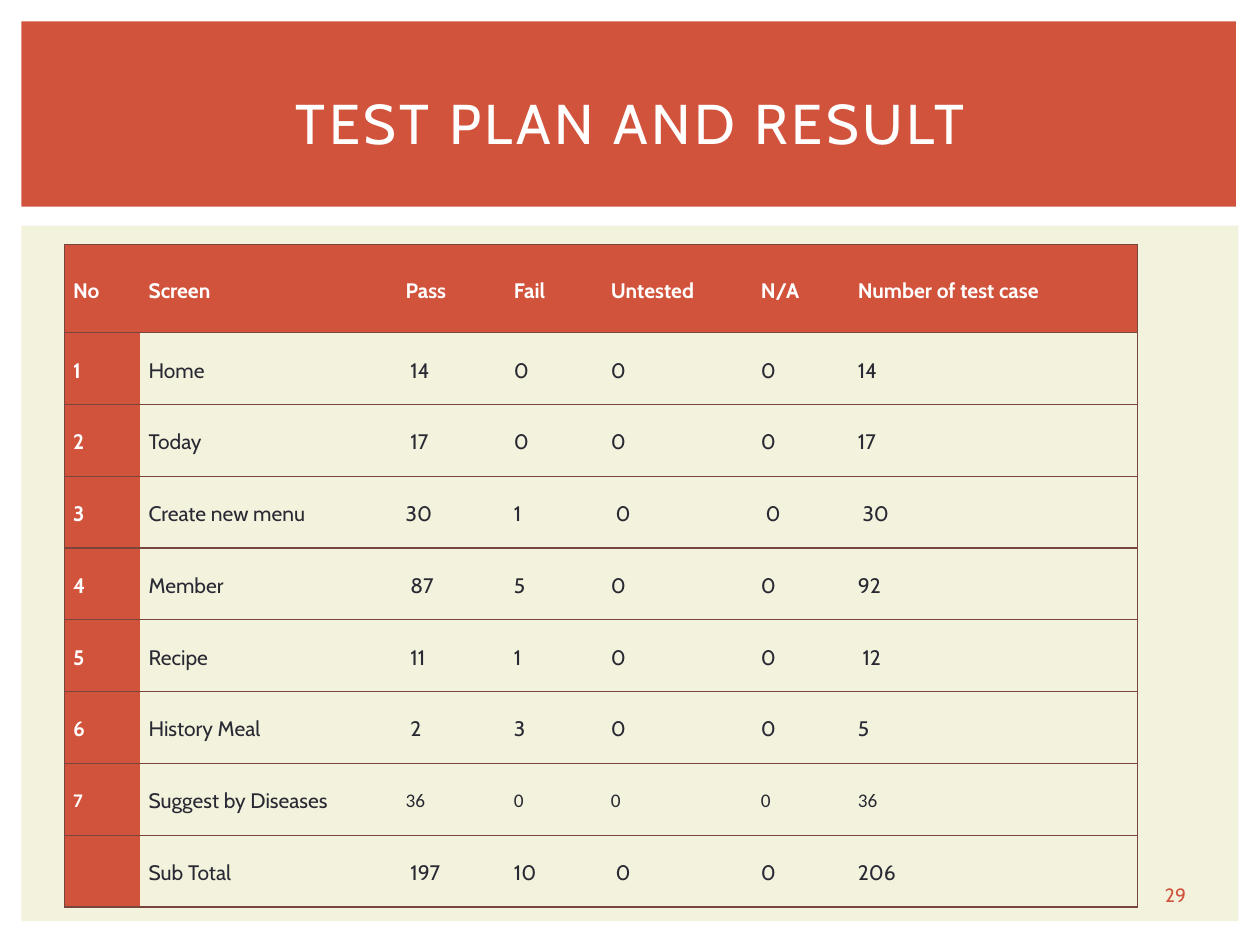
from lxml import etree
from pptx import Presentation
from pptx.dml.color import RGBColor
from pptx.enum.shapes import MSO_SHAPE
from pptx.enum.text import MSO_ANCHOR, PP_ALIGN
from pptx.oxml.ns import qn
from pptx.util import Pt

PX = 9144
RECT = MSO_SHAPE.RECTANGLE
MIDDLE = MSO_ANCHOR.MIDDLE
CENTER = PP_ALIGN.CENTER
RED, CREAM, WHITE, DARK, BROWN = "D2533C", "F3F2DC", "FFFFFF", "292934", "79463D"
NO_STYLE = "{2D5ABB26-0587-4C30-8999-92F81FD0307C}"


def rgb(value):
    return RGBColor.from_string(value)


def write(tf, text, color, **fmt):
    p = tf.paragraphs[0]
    r = p.add_run()
    r.text = text
    r.font.color.rgb = rgb(color)
    for key, value in fmt.items():
        setattr(r.font, key, value)
    return p


prs = Presentation()
prs.slide_width, prs.slide_height = 1000 * PX, 750 * PX
slide = prs.slides.add_slide(prs.slide_layouts[5])
shapes = slide.shapes
title = shapes.title

for box, color in [((17, 179, 966, 552), CREAM), ((17, 17, 964, 147), RED)]:
    sp = shapes.add_shape(RECT, *[v * PX for v in box])
    sp.shadow.inherit = False
    sp.fill.solid()
    sp.fill.fore_color.rgb = rgb(color)
    sp.line.fill.background()
    title._element.addprevious(sp._element)

for key, value in {"left": 42, "top": 39, "width": 917, "height": 115}.items():
    setattr(title, key, value * PX)
title.text_frame.vertical_anchor = MIDDLE
p = write(title.text_frame, "TEST PLAN AND RESULT", WHITE, size=Pt(32), name="Cabin")
p.alignment = CENTER
p.runs[0].font._element.set("spc", "200")

rows = [
    ["No", "Screen", "Pass", "Fail", "Untested", "N/A", "Number of test case"],
    ["1", "Home", " 14", "0", "0", "0", "14"],
    ["2", "Today", " 17", "0", "0", "0", "17"],
    ["3", "Create new menu", "30", "1", " 0", " 0", " 30"],
    ["4", "Member", " 87", "5", "0", "0", "92"],
    ["5", "Recipe", " 11", "1", "0", "0", " 12"],
    ["6", "History Meal", " 2", "3", "0", "0", "5"],
    ["7", "Suggest by Diseases", "36", "0", "0", "0", "36"],
    ["", "Sub Total", " 197", "10", " 0", "0", "206"],
]
widths = [60, 204, 86, 77, 119, 77, 229]
heights = [70] + [57] * 8
last = len(widths) - 1

frame = shapes.add_table(len(rows), len(widths), 51 * PX, 194 * PX,
                         sum(widths) * PX, sum(heights) * PX)
table = frame.table
table.horz_banding = False
table._tbl.tblPr.find(qn("a:tableStyleId")).text = NO_STYLE
for col, w in zip(table.columns, widths):
    col.width = w * PX
for row, h in zip(table.rows, heights):
    row.height = h * PX

cell_fmt = {"vertical_anchor": MIDDLE, "margin_left": 7 * PX, "margin_right": 7 * PX,
            "margin_top": 0, "margin_bottom": 0}
para_fmt = {"line_spacing": 1.15, "space_before": Pt(6)}

for i, row in enumerate(rows):
    for j, text in enumerate(row):
        cell = table.cell(i, j)
        for key, value in cell_fmt.items():
            setattr(cell, key, value)
        tcPr = cell._tc.get_or_add_tcPr()
        sides = ["L"] * (j == 0) + ["R"] * (j == last) + ["T", "B"]
        for side in sides:
            ln = etree.SubElement(tcPr, qn("a:ln" + side), w="10000")
            fill = etree.SubElement(ln, qn("a:solidFill"))
            etree.SubElement(fill, qn("a:srgbClr"), val=BROWN)
        head = i == 0 or j == 0
        if head:
            cell.fill.solid()
            cell.fill.fore_color.rgb = rgb(RED)
        else:
            cell.fill.background()
        if not text:
            continue
        small = i == 7 and j != 1
        p = write(cell.text_frame, text, WHITE if head else DARK, bold=head,
                  size=Pt(11 if small else 12), name="Calibri" if small else "Cabin")
        for key, value in para_fmt.items():
            setattr(p, key, value)

tf = shapes.add_textbox(901 * PX, 695 * PX, 64 * PX, 30 * PX).text_frame
tf.word_wrap = True
tf.vertical_anchor = MIDDLE
write(tf, "29", RED, size=Pt(11), name="Cabin").alignment = CENTER

prs.save("out.pptx")
